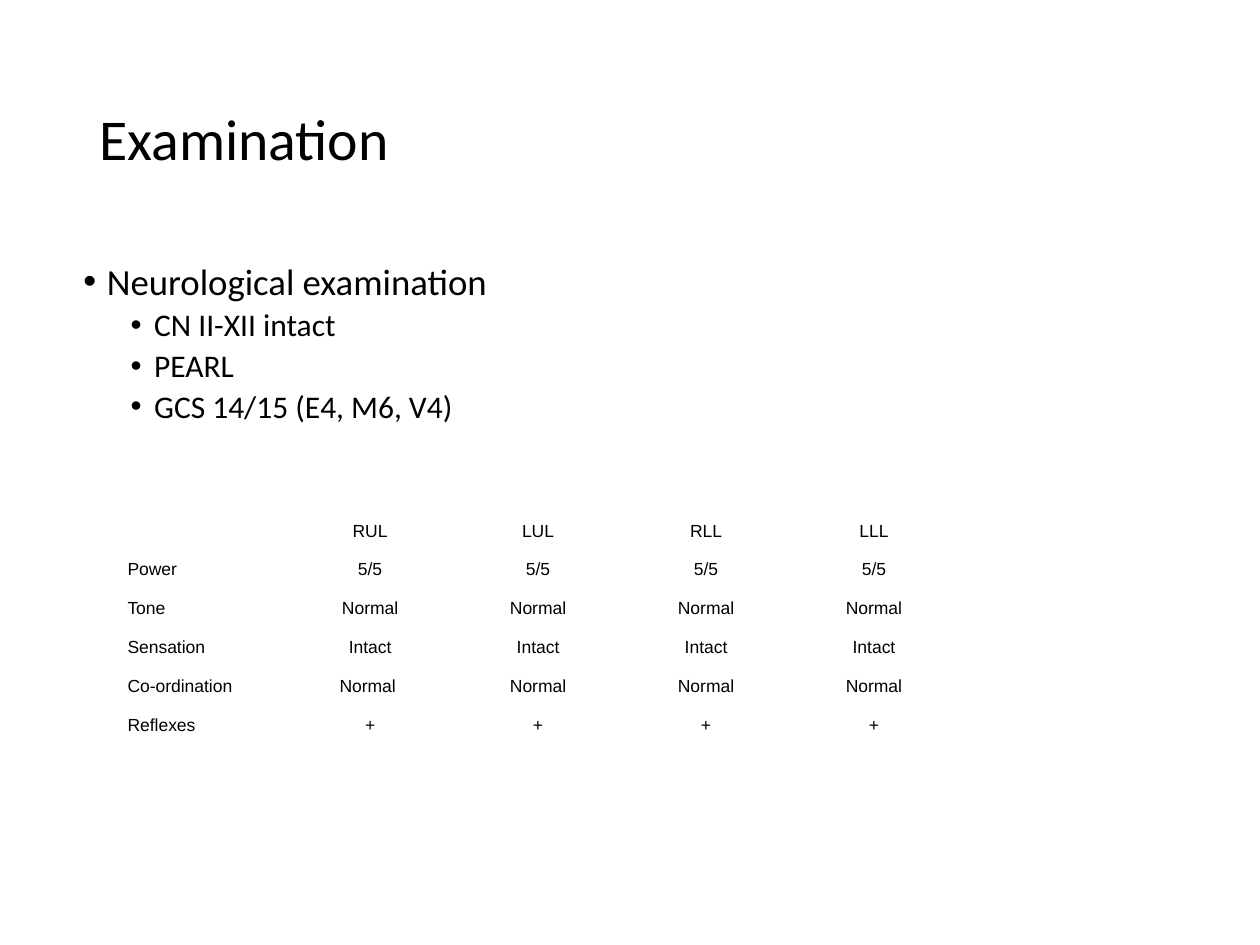
from dataclasses import dataclass
from typing import Optional

from lxml.etree import SubElement
from pptx import Presentation
from pptx.dml.color import RGBColor
from pptx.enum.text import MSO_ANCHOR, PP_ALIGN
from pptx.oxml.ns import qn
from pptx.util import Pt


@dataclass(frozen=True)
class Theme:
    """Colours, fonts and type sizes of the slide."""
    ink: RGBColor = RGBColor(0, 0, 0)
    paper: RGBColor = RGBColor(255, 255, 255)
    text_font: str = "Calibri"
    table_font: str = "Arial"
    title_size: float = 33
    heading_size: float = 21
    finding_size: float = 18
    table_size: float = 10
    plain_table_style: str = "{2D5ABB26-0587-4C30-8999-92F81FD0307C}"


@dataclass(frozen=True)
class Bullet:
    """One bulleted line of the findings."""
    text: str
    size: float
    level: int = 0
    before: Optional[float] = None


@dataclass(frozen=True)
class LimbTest:
    """One table row: a test and its result in each limb."""
    name: str
    results: tuple[str, ...]


THEME = Theme()
BULLETS = (
    Bullet("Neurological examination", THEME.heading_size),
    *(Bullet(finding, THEME.finding_size, 1, 3.75)
      for finding in ("CN II-XII intact", "PEARL", "GCS 14/15 (E4, M6, V4)")),
)
LIMB_TESTS = (
    LimbTest("", ("RUL", "LUL", "RLL", "LLL")),
    LimbTest("Power", ("5/5",) * 4),
    LimbTest("Tone", ("Normal",) * 4),
    LimbTest("Sensation", ("Intact",) * 4),
    LimbTest("Co-ordination", ("Normal ",) + ("Normal",) * 3),
    LimbTest("Reflexes", ("+",) * 4),
)


def place(shape, left: float, top: float, width: float, height: float) -> None:
    """Position a shape by lengths in points."""
    shape.left, shape.top = Pt(left), Pt(top)
    shape.width, shape.height = Pt(width), Pt(height)


def write(paragraph, text: str, *, size: float, font: str = THEME.text_font,
          align: PP_ALIGN = PP_ALIGN.LEFT, spacing: Optional[float] = None,
          before: Optional[float] = None) -> None:
    """Put formatted text in a paragraph."""
    paragraph.alignment = align
    if spacing is not None:
        paragraph.line_spacing = spacing
    if before is not None:
        paragraph.space_before = Pt(before)
    if not text:
        SubElement(paragraph._p, qn("a:endParaRPr"), sz=str(int(size * 100)))
        return
    run = paragraph.add_run()
    run.text = text
    run.font.size = Pt(size)
    run.font.name = font
    run.font.color.rgb = THEME.ink


def add_bullet_mark(paragraph, level: int) -> None:
    """Give a paragraph a round bullet and a hanging indent."""
    paragraph.level = level
    properties = paragraph._p.get_or_add_pPr()
    hang = Pt(13.5)
    properties.set("marL", str(hang * (1 + 2 * level)))
    properties.set("indent", str(-hang))
    colour = SubElement(properties, qn("a:buClr"))
    SubElement(colour, qn("a:srgbClr"), val=str(THEME.ink))
    SubElement(properties, qn("a:buFont"), typeface="Arial")
    SubElement(properties, qn("a:buChar"), char="•")


def draw_title(slide, text: str) -> None:
    """Format the title placeholder."""
    title = slide.shapes.title
    place(title, 49.5, 28.75, 621, 104.4)
    title.text_frame.vertical_anchor = MSO_ANCHOR.MIDDLE
    write(title.text_frame.paragraphs[0], text, size=THEME.title_size, spacing=0.9)


def draw_findings(slide, bullets: tuple[Bullet, ...]) -> None:
    """Draw the bulleted findings."""
    findings = slide.shapes.add_textbox(Pt(40.5), Pt(147), Pt(507.6), Pt(241))
    frame = findings.text_frame
    frame.word_wrap = True
    for index, bullet in enumerate(bullets):
        paragraph = frame.add_paragraph() if index else frame.paragraphs[0]
        add_bullet_mark(paragraph, bullet.level)
        write(paragraph, bullet.text, size=bullet.size, spacing=0.9, before=bullet.before)


def draw_limb_table(slide, tests: tuple[LimbTest, ...]) -> None:
    """Draw the plain table of limb results."""
    columns = 1 + len(tests[0].results)
    row_height = 22.25
    table = slide.shapes.add_table(
        len(tests), columns, Pt(67.5), Pt(295.2), Pt(96 * columns), Pt(row_height * len(tests))
    ).table
    table.first_row = table.horz_banding = False
    table._tbl.tblPr.find(qn("a:tableStyleId")).text = THEME.plain_table_style
    for row, test in enumerate(tests):
        table.rows[row].height = Pt(row_height)
        for column, text in enumerate((test.name, *test.results)):
            cell = table.cell(row, column)
            cell.fill.background()
            cell.margin_left = cell.margin_right = Pt(5.4)
            cell.margin_top = cell.margin_bottom = Pt(2.7)
            write(cell.text_frame.paragraphs[0], text, size=THEME.table_size,
                  font=THEME.table_font, align=PP_ALIGN.CENTER if column else PP_ALIGN.LEFT)


def main() -> None:
    """Build and save the examination slide."""
    presentation = Presentation()
    presentation.slide_width, presentation.slide_height = Pt(720), Pt(540)
    slide = presentation.slides.add_slide(presentation.slide_layouts[5])
    slide.background.fill.solid()
    slide.background.fill.fore_color.rgb = THEME.paper
    draw_title(slide, "Examination")
    draw_findings(slide, BULLETS)
    draw_limb_table(slide, LIMB_TESTS)
    presentation.save("out.pptx")


if __name__ == "__main__":
    main()
